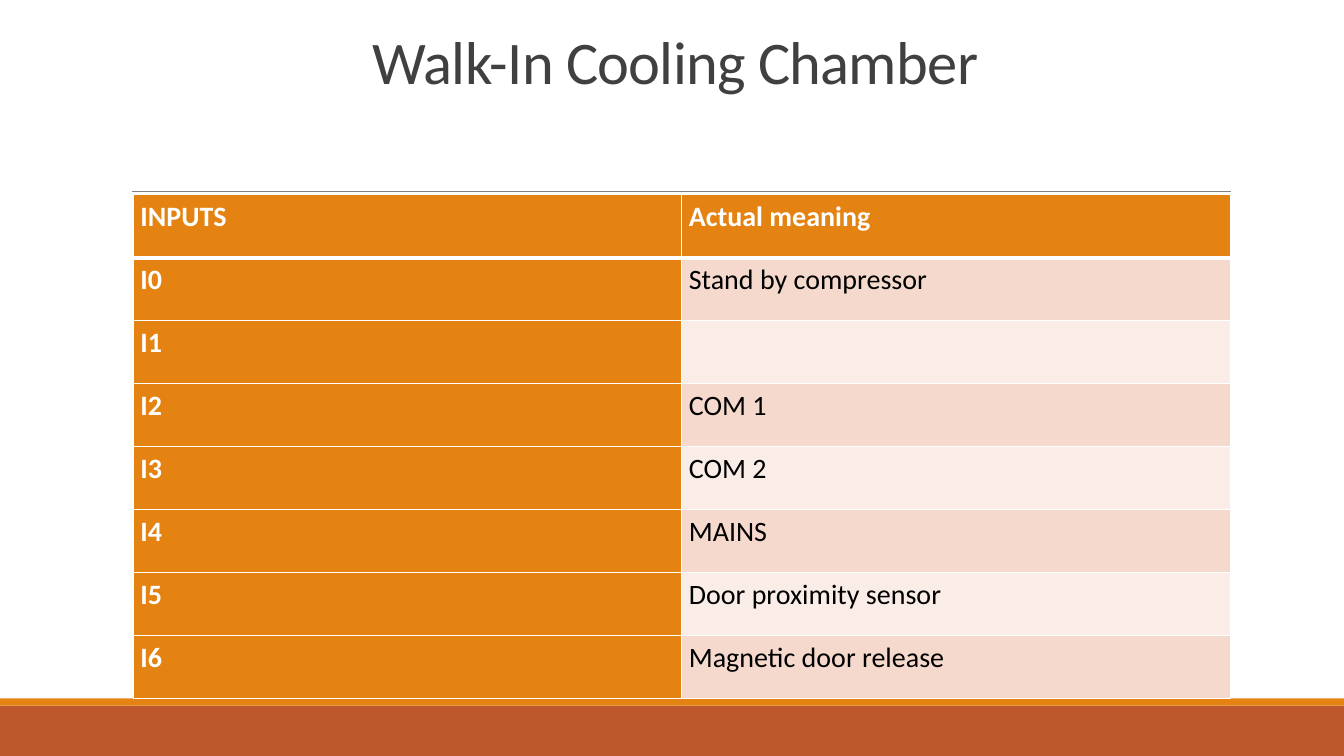
from lxml import etree
from pptx import Presentation
from pptx.dml.color import RGBColor
from pptx.enum.shapes import MSO_CONNECTOR, MSO_SHAPE
from pptx.enum.text import MSO_ANCHOR, PP_ALIGN
from pptx.oxml.ns import qn
from pptx.util import Cm, Pt

RECTANGLE = MSO_SHAPE.RECTANGLE
STRAIGHT = MSO_CONNECTOR.STRAIGHT
BOTTOM = MSO_ANCHOR.BOTTOM
CENTER = PP_ALIGN.CENTER

FONT = "Calibri"
WHITE = RGBColor(0xFF, 0xFF, 0xFF)
BLACK = RGBColor(0x00, 0x00, 0x00)
TITLE_GRAY = RGBColor(0x40, 0x40, 0x40)
RULE_GRAY = RGBColor(0x80, 0x80, 0x80)
ORANGE = RGBColor(0xE4, 0x83, 0x12)
RUST = RGBColor(0xBD, 0x58, 0x2C)
BANDS = [RGBColor(0xFA, 0xED, 0xE7), RGBColor(0xF5, 0xD9, 0xCC)]

ROWS = [
    ("INPUTS", "Actual meaning"),
    ("I0", "Stand by compressor"),
    ("I1", ""),
    ("I2", "COM 1"),
    ("I3", "COM 2"),
    ("I4", "MAINS"),
    ("I5", "Door proximity sensor"),
    ("I6", "Magnetic door release"),
]


def add_text(para, text, size, color, bold=False):
    span = para.add_run()
    span.text = text
    span.font.name = FONT
    span.font.size = Pt(size)
    span.font.bold = bold
    span.font.color.rgb = color
    return span


def add_border(cell, side, width):
    line = etree.SubElement(cell._tc.get_or_add_tcPr(), qn("a:ln" + side), w=str(Pt(width)))
    fill = etree.SubElement(line, qn("a:solidFill"))
    etree.SubElement(fill, qn("a:srgbClr"), val=str(WHITE))


deck = Presentation()
deck.slide_width = Cm(33.87)
deck.slide_height = Cm(19.05)
page = deck.slides.add_slide(deck.slide_layouts[6])

# Footer bands
for top, height, color in [(17.78, 1.27, RUST), (17.6, 0.18, ORANGE)]:
    band = page.shapes.add_shape(RECTANGLE, 0, Cm(top), deck.slide_width, Cm(height))
    band.shadow.inherit = False
    band.fill.solid()
    band.fill.fore_color.rgb = color
    band.line.fill.background()

# Rule above the table
rule = page.shapes.add_connector(STRAIGHT, Cm(3.32), Cm(4.82), Cm(31.01), Cm(4.82))
rule.line.color.rgb = RULE_GRAY
rule.line.width = Pt(0.5)
etree.SubElement(rule._element.spPr, qn("a:effectLst"))

# Title
box = page.shapes.add_textbox(Cm(3.05), Cm(0.79), Cm(27.94), Cm(1.78))
box.text_frame.word_wrap = True
box.text_frame.vertical_anchor = BOTTOM
para = box.text_frame.paragraphs[0]
para.alignment = CENTER
para.line_spacing = 0.85
title = add_text(para, "Walk-In Cooling Chamber", 43.2, TITLE_GRAY)
title.font._element.set("spc", "-50")

# Table of inputs: orange header row and first column, banded meanings
table = page.shapes.add_table(
    len(ROWS), 2, Cm(3.36), Cm(4.91), Cm(27.64), Cm(12.7)
).table
for row, texts in enumerate(ROWS):
    for column, text in enumerate(texts):
        cell = table.cell(row, column)
        cell.margin_left = cell.margin_right = Cm(0.18)
        cell.margin_top = cell.margin_bottom = 0
        heading = row == 0 or column == 0
        for side in "LRTB":
            under_header = (row, side) in [(0, "B"), (1, "T")]
            add_border(cell, side, 3 if under_header else 1)
        cell.fill.solid()
        cell.fill.fore_color.rgb = ORANGE if heading else BANDS[row % 2]
        if text:
            para = cell.text_frame.paragraphs[0]
            para.line_spacing = 1.15
            add_text(para, text, 20, WHITE if heading else BLACK, heading)

deck.save("out.pptx")
